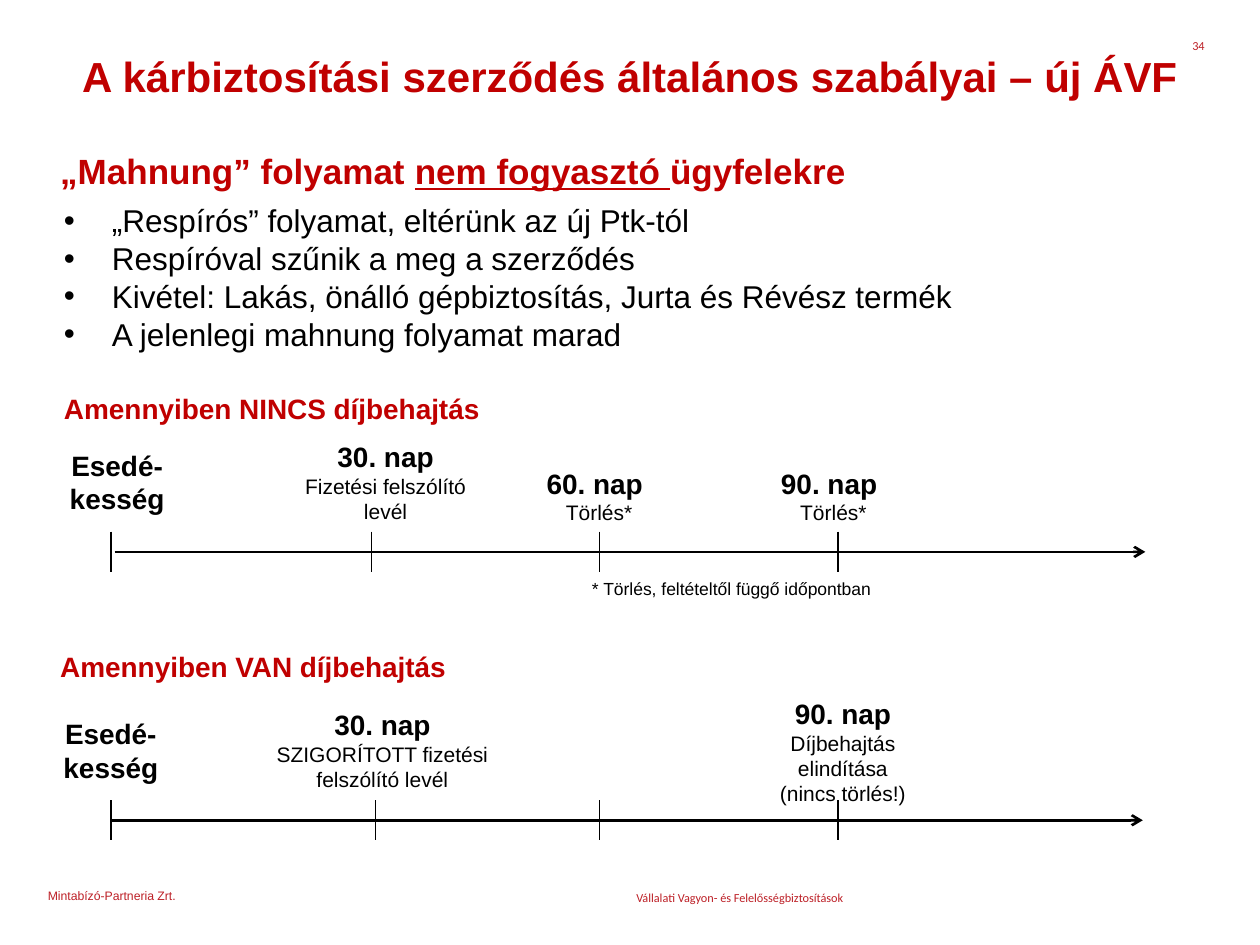
from lxml.etree import SubElement
from pptx import Presentation
from pptx.dml.color import RGBColor
from pptx.enum.shapes import MSO_CONNECTOR
from pptx.enum.text import MSO_ANCHOR as Anchor, MSO_AUTO_SIZE as AutoSize, PP_ALIGN as Align
from pptx.oxml.ns import qn
from pptx.util import Inches, Pt

COLORS = {"heading": "C00000", "body": "000000", "footer": "BD2027"}
HEADING = {"size": Pt(16), "bold": True, "color": "heading"}
DAY = {"size": Pt(16), "bold": True}
DETAIL = {"size": Pt(12)}
FOOTER = {"size": Pt(7), "color": "footer"}
CENTER = {"alignment": Align.CENTER}
GROW = {"auto_size": AutoSize.SHAPE_TO_FIT_TEXT}
MIDDLE = {"vertical_anchor": Anchor.MIDDLE}
NO_INSETS = {f"margin_{side}": 0 for side in ("left", "top", "right", "bottom")}


class SlideBuilder:
    """Holds the text style and the current slide."""

    def __init__(self, slide, font="Arial"):
        self.slide = slide
        self.font = font

    def text(self, left, top, width, height, paragraphs, frame_format=GROW):
        """Add a text box; each paragraph is (runs, paragraph format)."""
        box = self.slide.shapes.add_textbox(
            Inches(left), Inches(top), Inches(width), Inches(height))
        frame = box.text_frame
        frame.word_wrap = True
        for name, value in frame_format.items():
            setattr(frame, name, value)
        for index, (runs, paragraph_format) in enumerate(paragraphs):
            paragraph = frame.add_paragraph() if index else frame.paragraphs[0]
            for name, value in paragraph_format.items():
                setattr(paragraph, name, value)
            for words, run_format in runs:
                self.run(paragraph, words, run_format)
        return frame

    def run(self, paragraph, words, run_format):
        run = paragraph.add_run()
        run.text = words
        style = {"name": self.font, "color": "body", **run_format}
        run.font.color.rgb = RGBColor.from_string(COLORS[style.pop("color")])
        for name, value in style.items():
            setattr(run.font, name, value)

    def bullets(self, left, top, width, height, items, run_format):
        frame = self.text(left, top, width, height,
                          [([(item, run_format)], {}) for item in items], {})
        for paragraph in frame.paragraphs:
            properties = paragraph._p.get_or_add_pPr()
            properties.set("marL", str(Inches(0.38)))
            properties.set("indent", str(-Inches(0.38)))
            SubElement(properties, qn("a:buFont"), typeface="Arial")
            SubElement(properties, qn("a:buChar"), char="•")

    def line(self, start, end, weight, arrow=False):
        connector = self.slide.shapes.add_connector(
            MSO_CONNECTOR.STRAIGHT, *(Inches(value) for value in (*start, *end)))
        connector.line.width = Pt(weight)
        connector.line.color.rgb = RGBColor.from_string(COLORS["body"])
        if arrow:
            SubElement(connector.line._get_or_add_ln(), qn("a:tailEnd"), type="arrow")
        SubElement(connector._element.spPr, qn("a:effectLst"))

    def timeline(self, start, end, y, ticks):
        self.line((start, y), (end, y), 1.5, arrow=True)
        for x in ticks:
            self.line((x, y - 0.16), (x, y + 0.16), 0.75)

    def milestone(self, left, top, width, height, day, *details, day_format=CENTER):
        self.text(left, top, width, height,
                  [([(day, DAY)], day_format)]
                  + [([(detail, DETAIL)], CENTER) for detail in details])


def main():
    presentation = Presentation()
    presentation.slide_width, presentation.slide_height = Inches(10), Inches(7.5)
    builder = SlideBuilder(presentation.slides.add_slide(presentation.slide_layouts[6]))

    # Title and subtitle
    title = {**HEADING, "size": Pt(24)}
    subtitle = {**HEADING, "size": Pt(20)}
    builder.text(0.5, 0.3, 9, 0.69,
                 [([("A kárbiztosítási szerződés általános szabályai – új ÁVF", title)],
                   {**CENTER, "line_spacing": Pt(22)})], MIDDLE)
    builder.text(0.38, 1.24, 9.17, 0.26,
                 [([("„Mahnung” folyamat ", subtitle),
                    ("nem fogyasztó ", {**subtitle, "underline": True}),
                    ("ügyfelekre", subtitle)], {"line_spacing": Pt(22)})], MIDDLE)

    # Key points
    builder.bullets(0.41, 1.55, 9.17, 1.1, [
        "„Respírós” folyamat, eltérünk az új Ptk-tól",
        "Respíróval szűnik a meg a szerződés",
        "Kivétel: Lakás, önálló gépbiztosítás, Jurta és Révész termék",
        "A jelenlegi mahnung folyamat marad",
    ], {"size": Pt(18)})

    # Timeline without premium collection
    builder.text(0.41, 3.06, 3.67, 0.37, [([("Amennyiben NINCS díjbehajtás", HEADING)], {})])
    builder.timeline(0.91, 9.09, 4.38, (0.88, 2.95, 4.76, 6.65))
    builder.milestone(0.38, 3.51, 1.1, 0.64, "Esedé-kesség")
    builder.milestone(2.3, 3.44, 1.52, 0.77, "30. nap", "Fizetési felszólító levél")
    for left, day in ((4.24, "60. nap"), (6.1, "90. nap")):
        builder.milestone(left, 3.65, 1.03, 0.57, day, "Törlés*", day_format={})
    builder.text(4.6, 4.54, 3, 0.27,
                 [([("* Törlés, feltételtől függő időpontban", {"size": Pt(10)})], {})])

    # Timeline with premium collection
    builder.text(0.38, 5.11, 3.67, 0.37, [([("Amennyiben VAN díjbehajtás", HEADING)], {})])
    builder.timeline(0.88, 9.07, 6.51, (0.88, 2.98, 4.76, 6.65))
    builder.milestone(0.33, 5.64, 1.1, 0.64, "Esedé-kesség")
    builder.milestone(2.09, 5.57, 1.89, 0.77, "30. nap",
                      "SZIGORÍTOTT fizetési felszólító levél")
    builder.milestone(6.02, 5.48, 1.34, 0.98, "90. nap",
                      "Díjbehajtás elindítása", "(nincs törlés!)")

    # Page number and footer
    calibri = {**FOOTER, "name": "Calibri"}
    builder.text(9.34, 0.3, 0.22, 0.2,
                 [([("34", calibri)], {"alignment": Align.RIGHT})], NO_INSETS)
    builder.text(0.38, 7.06, 1.23, 0.13,
                 [([("Mintabízó-Partneria Zrt.", FOOTER)], {"line_spacing": 0.96})], NO_INSETS)
    builder.text(5.05, 7.06, 3.17, 0.12,
                 [([("Vállalati Vagyon- és Felelősségbiztosítások", calibri)], {})],
                 {**NO_INSETS, **MIDDLE})

    presentation.save("out.pptx")


if __name__ == "__main__":
    main()
